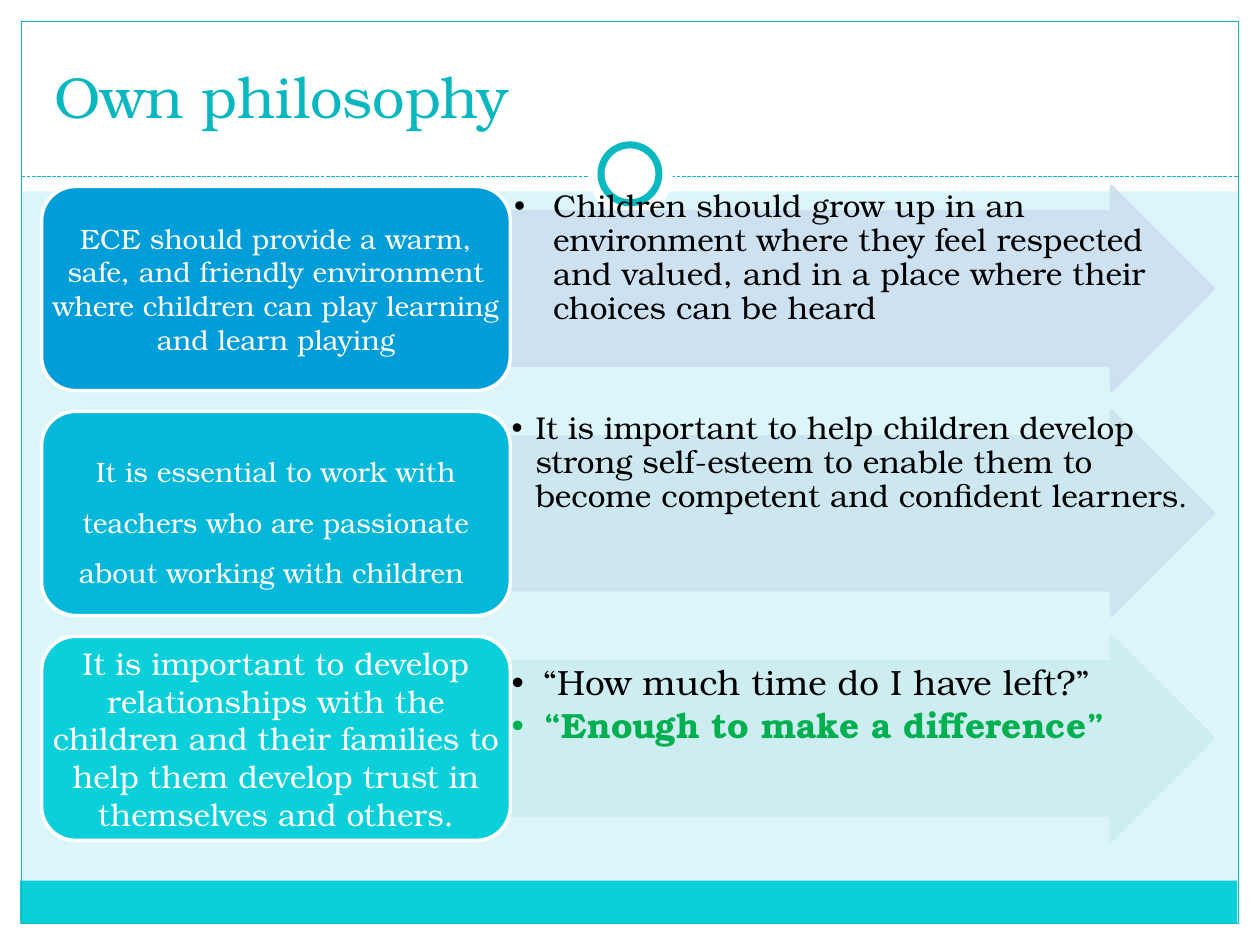
from dataclasses import dataclass

from lxml import etree
from pptx import Presentation
from pptx.dml.color import RGBColor
from pptx.enum.dml import MSO_LINE
from pptx.enum.shapes import MSO_CONNECTOR, MSO_SHAPE
from pptx.enum.text import MSO_ANCHOR, MSO_AUTO_SIZE, PP_ALIGN
from pptx.oxml.ns import qn
from pptx.util import Inches, Pt

RECTANGLE = MSO_SHAPE.RECTANGLE
OVAL = MSO_SHAPE.OVAL
ROUNDED = MSO_SHAPE.ROUNDED_RECTANGLE
ARROW = MSO_SHAPE.RIGHT_ARROW
STRAIGHT = MSO_CONNECTOR.STRAIGHT
DASH = MSO_LINE.SQUARE_DOT
TOP, MIDDLE, BOTTOM = MSO_ANCHOR.TOP, MSO_ANCHOR.MIDDLE, MSO_ANCHOR.BOTTOM
LEFT, CENTER = PP_ALIGN.LEFT, PP_ALIGN.CENTER
NO_AUTOFIT = MSO_AUTO_SIZE.NONE

FONT = "TeX Gyre Bonum"
WHITE, BLACK, GREEN = "FFFFFF", "000000", "00B050"
TEAL, TITLE_TEAL, PALE, AQUA = "0AB8BF", "08B7BF", "DBF5F9", "0BD0D9"
COMPARISON_LAYOUT = 4

BOX_LEFT, BOX_WIDTH = 0.33, 3.72
ARROW_LEFT, ARROW_WIDTH = BOX_LEFT + BOX_WIDTH, 5.58
FIRST_TOP, LAST_TOP, ROW_HEIGHT = 1.48, 5.05, 1.62


@dataclass(frozen=True)
class Span:
    text: str
    size: int
    color: str = BLACK
    bold: bool = False


@dataclass(frozen=True)
class Belief:
    statement: Span
    box_color: str
    arrow_color: str
    bullets: list[list[Span]]
    indent: float
    inset: float
    top_inset: float
    line_spacing: float = 1.0


BELIEFS = [
    Belief(
        Span("ECE should provide a warm, safe, and friendly environment where "
             "children can play learning and learn playing", 16, WHITE),
        "009DD9", "CCDFF1",
        [[Span("Children should grow up in an environment where they feel respected "
               "and valued, and in a place where their choices can be heard", 18)]],
        indent=0.31, inset=0.03, top_inset=0.03),
    Belief(
        Span("It is essential to work with teachers who are passionate about "
             "working with children ", 16, WHITE),
        "05B7D9", "CCE6F1",
        [[Span("It is important to help children develop strong self-esteem to enable "
               "them to become competent and confident learners", 18), Span(".", 16)]],
        indent=0.19, inset=0.01, top_inset=0.01, line_spacing=1.5),
    Belief(
        Span("It is important to develop relationships with the children and their "
             "families to help them develop trust in themselves and others.", 18, WHITE),
        AQUA, "CCEDF1",
        [[Span("“How much time do I have left?”", 20)],
         [Span("“Enough to make a difference”", 20, GREEN, True)]],
        indent=0.25, inset=0.01, top_inset=0.23),
]


def rgb(color: str) -> RGBColor:
    return RGBColor.from_string(color)


def add_shape(slide, kind, left: float, top: float, width: float, height: float,
              fill: str | None = None, line: str | None = None, line_width: float = 1):
    shape = slide.shapes.add_shape(
        kind, Inches(left), Inches(top), Inches(width), Inches(height))
    shape.shadow.inherit = False
    if fill:
        shape.fill.solid()
        shape.fill.fore_color.rgb = rgb(fill)
    else:
        shape.fill.background()
    if line:
        shape.line.color.rgb = rgb(line)
        shape.line.width = Pt(line_width)
    else:
        shape.line.fill.background()
    return shape


def set_opacity(shape, percent: int) -> None:
    """Apply one opacity to both the fill and the outline."""
    for color in shape._element.spPr.iter(qn("a:srgbClr")):
        etree.SubElement(color, qn("a:alpha")).set("val", str(percent * 1000))


def add_span(paragraph, span: Span) -> None:
    run = paragraph.add_run()
    run.text = span.text
    run.font.name = FONT
    run.font.size = Pt(span.size)
    run.font.bold = span.bold
    run.font.color.rgb = rgb(span.color)


def set_frame(frame, anchor, side: float, top: float, bottom: float) -> None:
    frame.word_wrap = True
    frame.auto_size = NO_AUTOFIT
    frame.vertical_anchor = anchor
    frame.margin_left = frame.margin_right = Inches(side)
    frame.margin_top, frame.margin_bottom = Inches(top), Inches(bottom)


def set_bullet(paragraph, indent: float) -> None:
    properties = paragraph._p.get_or_add_pPr()
    properties.set("marL", str(Inches(indent)))
    properties.set("indent", str(-Inches(indent)))
    etree.SubElement(properties, qn("a:buFont")).set("typeface", "Arial")
    etree.SubElement(properties, qn("a:buChar")).set("char", "•")


def place_in_front(slide, placeholder, left: float, top: float,
                   width: float, height: float) -> None:
    placeholder.left, placeholder.top = Inches(left), Inches(top)
    placeholder.width, placeholder.height = Inches(width), Inches(height)
    slide.shapes._spTree.append(placeholder._element)


def draw_frame(slide) -> None:
    """Draw the white margins, the footer band, the divider and its ring."""
    for area in [(0, 7.33, 10, 0.17), (0, 0, 10, 1.52),
                 (0, 0, 0.17, 7.5), (9.83, 0, 0.17, 7.5)]:
        add_shape(slide, RECTANGLE, *area, fill=WHITE)
    add_shape(slide, RECTANGLE, 0.16, 6.99, 9.66, 0.34, fill=AQUA)
    add_shape(slide, RECTANGLE, 0.17, 0.17, 9.66, 7.16, line=TEAL, line_width=0.75)
    divider = slide.shapes.add_connector(
        STRAIGHT, Inches(0.17), Inches(1.4), Inches(9.83), Inches(1.4))
    divider.line.color.rgb = rgb(TEAL)
    divider.line.width = Pt(0.75)
    divider.line.dash_style = DASH
    etree.SubElement(divider._element.spPr, qn("a:effectLst"))
    add_shape(slide, OVAL, 4.67, 1.05, 0.67, 0.67, fill=WHITE)
    add_shape(slide, OVAL, 4.77, 1.15, 0.46, 0.46, fill=WHITE, line=TEAL, line_width=4)


def draw_title(slide, text: str) -> None:
    title = slide.shapes.title
    place_in_front(slide, title, 0.33, 0.25, 9.33, 0.83)
    set_frame(title.text_frame, BOTTOM, 0.1, 0.05, 0.05)
    paragraph = title.text_frame.paragraphs[0]
    paragraph.alignment = LEFT
    add_span(paragraph, Span(text, 33, TITLE_TEAL))


def draw_belief(slide, belief: Belief, body, top: float) -> None:
    arrow = add_shape(slide, ARROW, ARROW_LEFT, top, ARROW_WIDTH, ROW_HEIGHT,
                      belief.arrow_color, belief.arrow_color, 2)
    arrow.adjustments[0], arrow.adjustments[1] = 0.75, 0.5
    set_opacity(arrow, 90)

    place_in_front(slide, body, ARROW_LEFT, top, ARROW_WIDTH, ROW_HEIGHT)
    frame = body.text_frame
    set_frame(frame, TOP, belief.inset, belief.top_inset, belief.inset)
    for index, spans in enumerate(belief.bullets):
        paragraph = frame.add_paragraph() if index else frame.paragraphs[0]
        paragraph.alignment = LEFT
        paragraph.line_spacing = 0.9
        paragraph.space_before, paragraph.space_after = Pt(0), Pt(3)
        set_bullet(paragraph, belief.indent)
        for span in spans:
            add_span(paragraph, span)

    box = add_shape(slide, ROUNDED, BOX_LEFT, top, BOX_WIDTH, ROW_HEIGHT,
                    belief.box_color, WHITE, 2)
    # The rounded corners already inset the text of the box by 0.08.
    set_frame(box.text_frame, MIDDLE, 0, 0, 0)
    paragraph = box.text_frame.paragraphs[0]
    paragraph.alignment = CENTER
    paragraph.line_spacing = belief.line_spacing
    add_span(paragraph, belief.statement)


def main() -> None:
    presentation = Presentation()
    presentation.slide_width, presentation.slide_height = Inches(10), Inches(7.5)
    slide = presentation.slides.add_slide(presentation.slide_layouts[COMPARISON_LAYOUT])
    slide.background.fill.solid()
    slide.background.fill.fore_color.rgb = rgb(PALE)
    _, *bodies = slide.placeholders
    draw_frame(slide)
    draw_title(slide, "Own philosophy")
    pitch = (LAST_TOP - FIRST_TOP) / (len(BELIEFS) - 1)
    for index, (belief, body) in enumerate(zip(BELIEFS, bodies)):
        draw_belief(slide, belief, body, FIRST_TOP + index * pitch)
    for unused in bodies[len(BELIEFS):]:
        unused._element.getparent().remove(unused._element)
    presentation.save("out.pptx")


if __name__ == "__main__":
    main()
